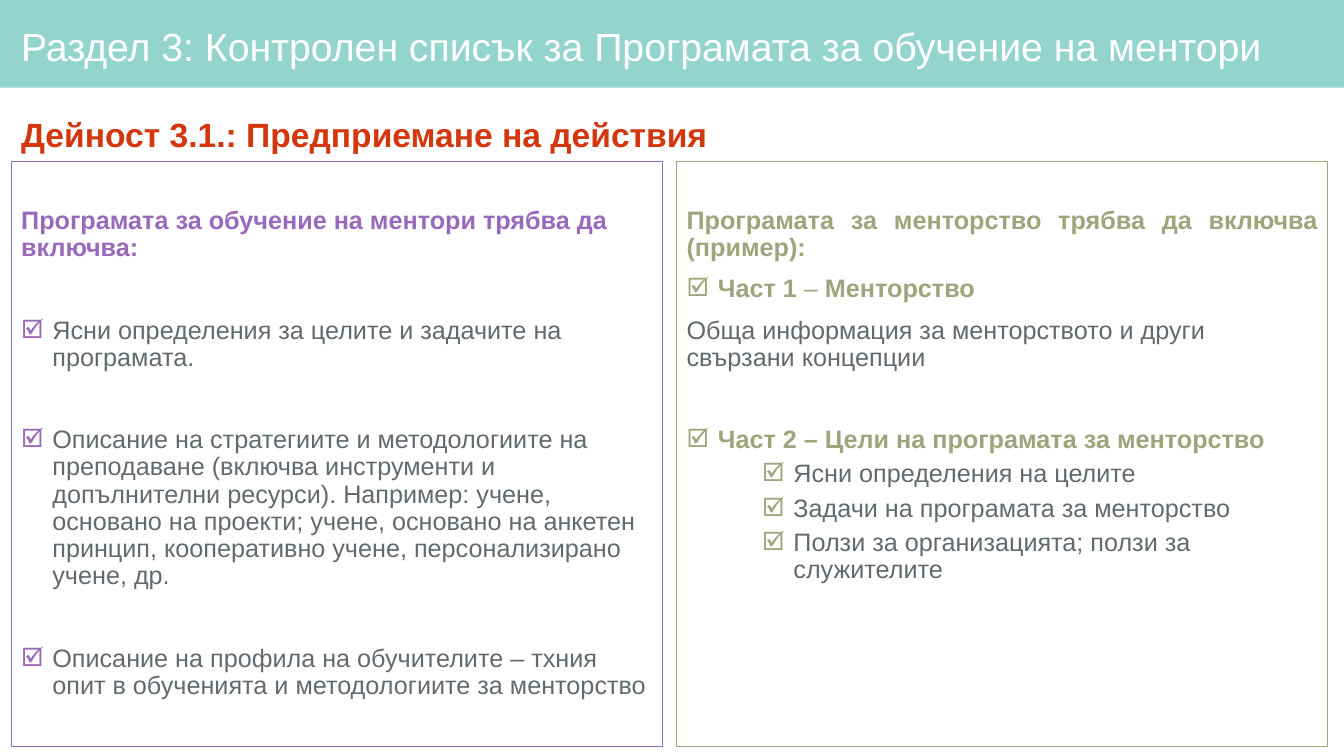
from lxml.etree import SubElement
from pptx import Presentation
from pptx.dml.color import RGBColor
from pptx.enum.shapes import MSO_SHAPE
from pptx.enum.text import MSO_ANCHOR, MSO_AUTO_SIZE, PP_ALIGN
from pptx.oxml.ns import qn
from pptx.util import Inches, Pt

COLORS = {"teal": "93D4CC", "purple": "9869BD", "olive": "9DA57C",
          "red": "D3370D", "grey": "636A6F", "white": "FFFFFF"}
FONT = "Arial"
WIDE = 39.4  # space before a paragraph that opens a new group, in points
LEFT, WIDTH, GAP = 0.11, 13.06, 0.14

# Rows: style, text (or runs with their weight), space before in points
PLAN = [
    ("head", "Програмата за обучение на ментори трябва да включва:", 0),
    ("item", "Ясни определения за целите и задачите на програмата.", WIDE),
    ("item", "Описание на стратегиите и методологиите на преподаване (включва "
     "инструменти и допълнителни ресурси). Например: учене, основано на проекти; "
     "учене, основано на анкетен принцип, кооперативно учене, персонализирано "
     "учене, др.", WIDE),
    ("item", "Описание на профила на обучителите – тхния опит в обученията и "
     "методологиите за менторство", WIDE),
]
PARTS = [
    ("wide", "Програмата за менторство трябва да включва (пример):", 0),
    ("part", [("Част 1 ", True), ("– ", False), ("Менторство", True)], 10),
    ("text", "Обща информация за менторството и други свързани концепции", 10),
    ("part", "Част 2 – Цели на програмата за менторство", WIDE),
    ("sub", "Ясни определения на целите", 5),
    ("sub", "Задачи на програмата за менторство", 5),
    ("sub", "Ползи за организацията; ползи за служителите", 5),
]
# Style: level, left margin (0 = no bullet), bold, alignment
STYLES = {
    "head": (0, 0, True, PP_ALIGN.LEFT),
    "wide": (0, 0, True, PP_ALIGN.JUSTIFY),
    "text": (0, 0, False, PP_ALIGN.LEFT),
    "item": (0, 0.31, False, PP_ALIGN.LEFT),
    "part": (0, 0.31, True, PP_ALIGN.LEFT),
    "sub": (1, 1.06, False, PP_ALIGN.LEFT),
}


def color(name):
    return RGBColor.from_string(COLORS[name])


def place(shape, box, pads, anchor):
    shape.left, shape.top, shape.width, shape.height = map(Inches, box)
    frame = shape.text_frame
    frame.word_wrap = True
    frame.auto_size = MSO_AUTO_SIZE.NONE
    frame.vertical_anchor = anchor
    (frame.margin_left, frame.margin_top,
     frame.margin_right, frame.margin_bottom) = map(Inches, pads)
    return frame


def style(para, size, tint, bold, align, lines, before):
    para.alignment = align
    para.line_spacing = lines
    para.space_before = Pt(before)
    font = para.font
    font.name, font.size, font.bold = FONT, Pt(size), bold
    font.color.rgb = color(tint)


def indent(para, left, tint):
    props = para._p.get_or_add_pPr()
    props.set("marL", str(Inches(left)))
    props.set("indent", str(-Inches(0.31) if left else 0))
    if not left:
        SubElement(props, qn("a:buNone"))
        return
    fill = SubElement(props, qn("a:buClr"))
    SubElement(fill, qn("a:srgbClr"), val=COLORS[tint])
    SubElement(props, qn("a:buFont"), typeface=FONT)
    SubElement(props, qn("a:buChar"), char="🗹")


def banner(slide, box):
    # Coloured band behind the title
    x, y, w, h = box
    band = slide.shapes.add_shape(MSO_SHAPE.RECTANGLE, *map(Inches, box))
    band.shadow.inherit = False
    band.fill.solid()
    band.fill.fore_color.rgb = color("teal")
    band.line.fill.background()
    slide.shapes._spTree.insert(2, band._element)
    # Title
    frame = place(slide.shapes.title, (x + LEFT, y + 0.09, WIDTH, h - 0.09),
                  (0.1, 0.06, 0.06, 0.06), MSO_ANCHOR.MIDDLE)
    frame.text = "Раздел 3: Контролен списък за Програмата за обучение на ментори"
    style(frame.paragraphs[0], 28, "white", False, PP_ALIGN.LEFT, 0.9, 0)


def heading(shape, box):
    frame = place(shape, box, (0.1, 0.05, 0.1, 0.05), MSO_ANCHOR.MIDDLE)
    frame.text = "Дейност 3.1.: Предприемане на действия"
    para = frame.paragraphs[0]
    indent(para, 0, "red")
    style(para, 24, "red", True, PP_ALIGN.JUSTIFY, 1.5, 10)


def panel(shape, box, tint, rows):
    frame = place(shape, box, (0.1, 0.46, 0.1, 0.05), MSO_ANCHOR.TOP)
    shape.line.color.rgb = color(tint)
    shape.line.width = Pt(0.75)
    for i, (kind, text, before) in enumerate(rows):
        para = frame.add_paragraph() if i else frame.paragraphs[0]
        level, left, bold, align = STYLES[kind]
        para.level = level
        indent(para, left, tint)
        shade = tint if kind in ("head", "wide", "part") else "grey"
        style(para, 18, shade, bold, align, 0.9, before)
        if isinstance(text, str):
            para.add_run().text = text
            continue
        for words, heavy in text:
            run = para.add_run()
            run.text, run.font.bold = words, heavy


def main():
    deck = Presentation()
    deck.slide_width, deck.slide_height = Inches(13.33), Inches(7.5)
    slide = deck.slides.add_slide(deck.slide_layouts[4])
    holds = {p.placeholder_format.idx: p for p in slide.placeholders}
    spare = holds[3]._element
    spare.getparent().remove(spare)

    banner(slide, (0, 0, 13.33, 0.87))
    heading(holds[1], (LEFT, 0.93, WIDTH, 0.6))
    # Two equal panels
    width = (WIDTH - GAP) / 2
    sides = [(holds[2], "purple", PLAN), (holds[4], "olive", PARTS)]
    for i, (shape, tint, rows) in enumerate(sides):
        panel(shape, (LEFT + i * (width + GAP), 1.6, width, 5.81), tint, rows)
    deck.save("out.pptx")


if __name__ == "__main__":
    main()
